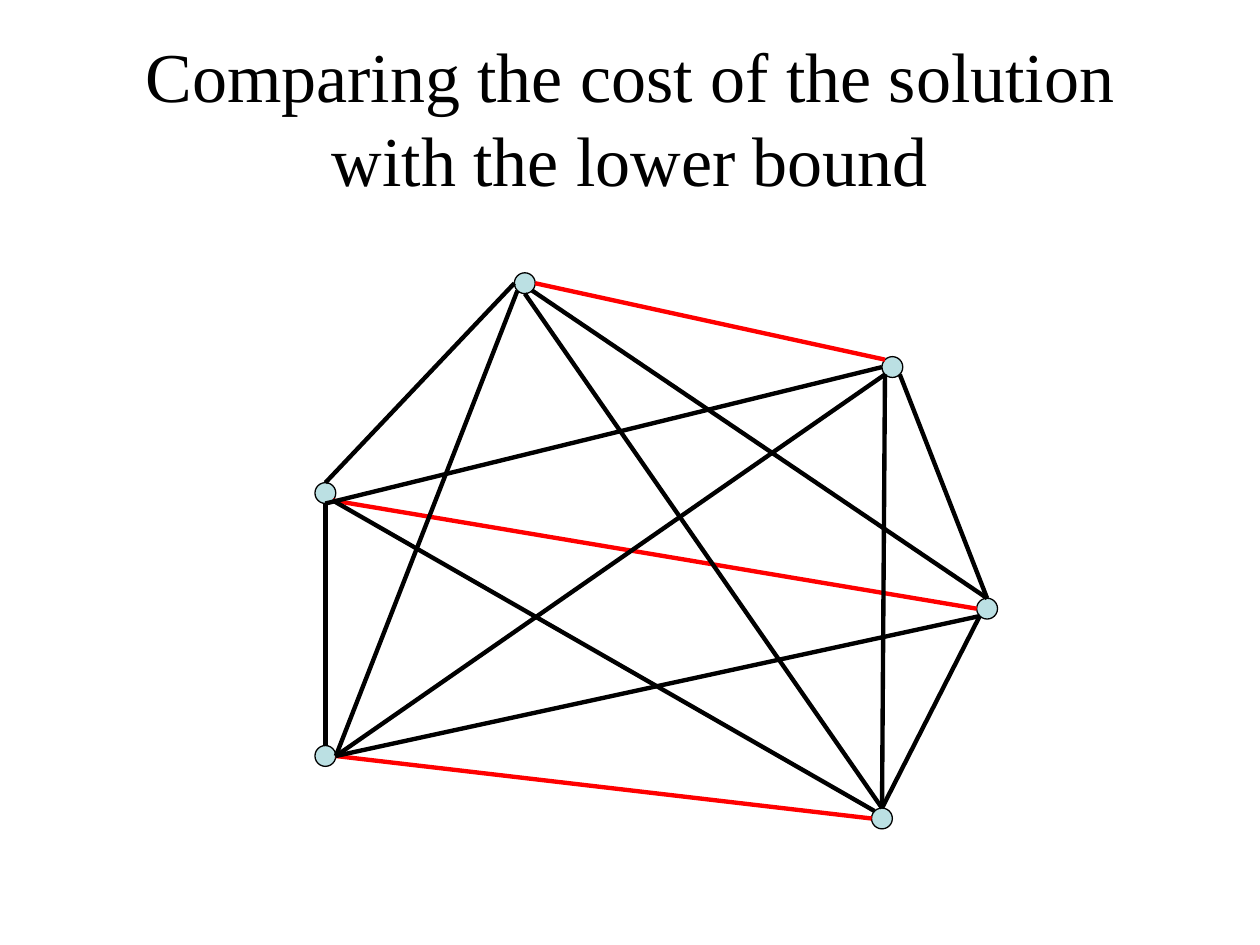
from lxml import etree
from pptx import Presentation
from pptx.dml.color import RGBColor
from pptx.enum import shapes, text
from pptx.oxml.ns import qn
from pptx.util import Cm, Pt

COLORS = {"ink": "000000", "match": "FF0000", "node": "BBE0E3"}
FONT = "Times New Roman"
DOT = 0.42

# Centre of each node in cm, relative to the graph's box
NODES = {
    "top": (4.23, 0.21),
    "upper": (11.64, 1.9),
    "right": (13.55, 6.77),
    "low": (11.43, 11),
    "base": (0.21, 9.74),
    "left": (0.21, 4.44),
}

# Points on a node's rim, as unit offsets from its centre
DIAG = 0.71
RIM = {
    "n": (0, -1), "s": (0, 1), "w": (-1, 0), "e": (1, 0),
    "nw": (-DIAG, -DIAG), "sw": (-DIAG, DIAG), "se": (DIAG, DIAG),
}

# Start node and rim point, end node and rim point
TOUR = [
    ("upper", "w", "left", "s"),
    ("low", "n", "top", "s"),
    ("right", "sw", "base", "e"),
    ("right", "n", "top", "se"),
    ("low", "nw", "left", "se"),
    ("upper", "sw", "base", "e"),
    ("left", "s", "base", "n"),
    ("right", "sw", "low", "n"),
    ("top", "w", "left", "n"),
    ("upper", "se", "right", "n"),
    ("top", "sw", "base", "e"),
    ("upper", "sw", "low", "n"),
]
MATCH = [
    ("top", "e", "upper", "nw"),
    ("right", "w", "left", "se"),
    ("low", "w", "base", "e"),
]


def paint(name):
    return RGBColor.from_string(COLORS[name])


def add_title(slide, left, top, width, height):
    box = slide.shapes.add_textbox(Cm(left), Cm(top), Cm(width), Cm(height))
    frame = box.text_frame
    frame.word_wrap = True
    frame.vertical_anchor = text.MSO_ANCHOR.MIDDLE
    para = frame.paragraphs[0]
    para.text = "Comparing the cost of the solution with the lower bound"
    para.alignment = text.PP_ALIGN.CENTER
    para.font.name = FONT
    para.font.size = Pt(40)
    para.font.color.rgb = paint("ink")


def add_node(slide, x, y):
    dot = slide.shapes.add_shape(
        shapes.MSO_SHAPE.OVAL, Cm(x - DOT / 2), Cm(y - DOT / 2), Cm(DOT), Cm(DOT))
    dot.shadow.inherit = False
    dot.fill.solid()
    dot.fill.fore_color.rgb = paint("node")
    dot.line.color.rgb = paint("ink")
    dot.line.width = Pt(0.75)


def add_edge(slide, start, end, color):
    ends = [Cm(v) for v in (*start, *end)]
    edge = slide.shapes.add_connector(shapes.MSO_CONNECTOR.STRAIGHT, *ends)
    edge.line.color.rgb = paint(color)
    edge.line.width = Pt(2.5)
    etree.SubElement(edge._element.spPr, qn("a:effectLst"))


def add_graph(slide, left, top):
    """Draw the complete graph, with the matching in its own colour."""
    def rim(node, side):
        (x, y), (dx, dy) = NODES[node], RIM[side]
        return left + x + dx * DOT / 2, top + y + dy * DOT / 2

    for x, y in NODES.values():
        add_node(slide, left + x, top + y)
    for color, edges in (("match", MATCH), ("ink", TOUR)):
        for a, out, b, into in edges:
            add_edge(slide, rim(a, out), rim(b, into), color)


def main():
    deck = Presentation()
    deck.slide_width, deck.slide_height = Cm(25.4), Cm(19.05)
    slide = deck.slides.add_slide(deck.slide_layouts[6])
    add_title(slide, 1.27, 0.76, 22.86, 3.18)
    add_graph(slide, 6.35, 5.5)
    deck.save("out.pptx")


if __name__ == "__main__":
    main()
